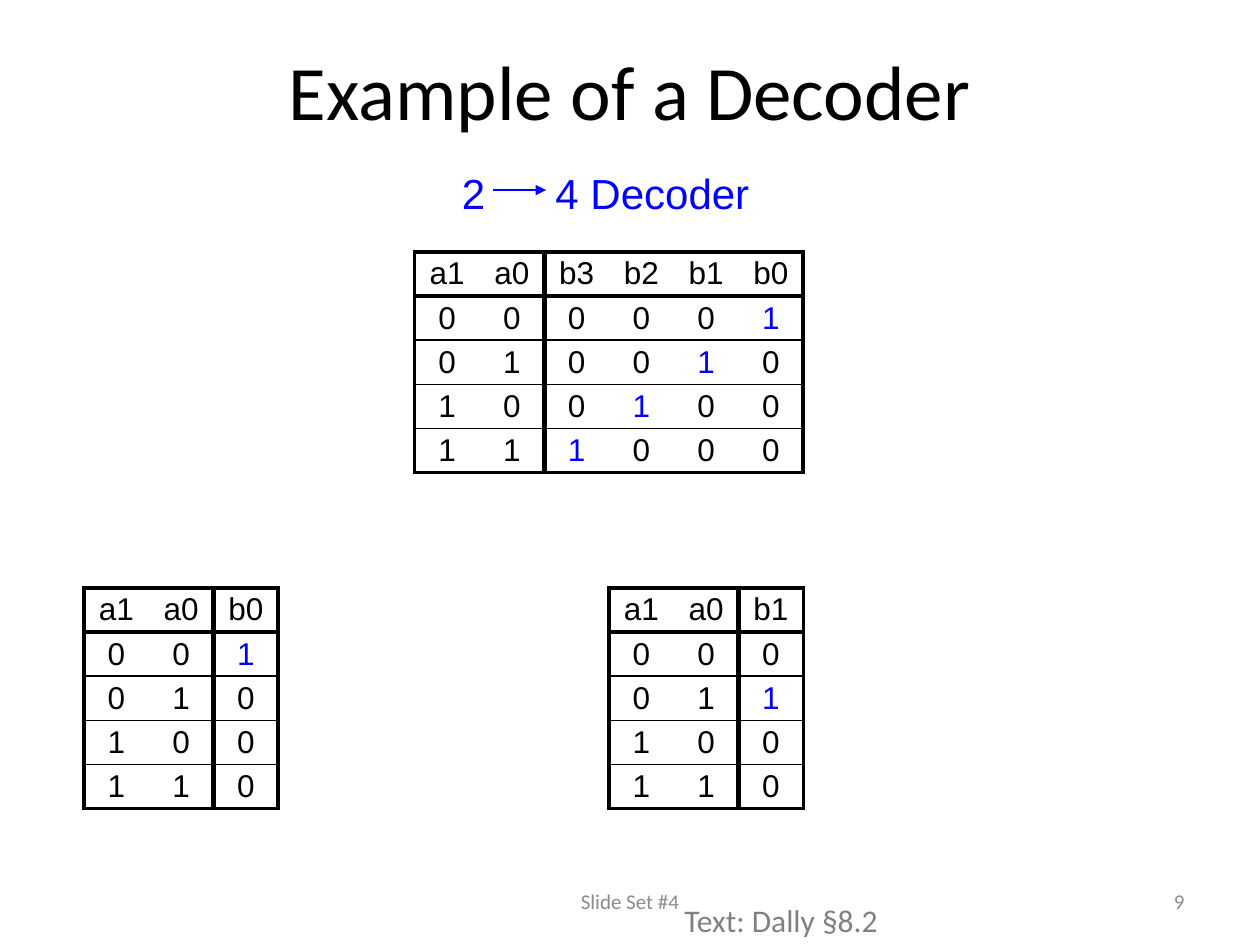
from dataclasses import dataclass
from itertools import product

from lxml.etree import SubElement
from pptx import Presentation
from pptx.dml.color import RGBColor
from pptx.enum.shapes import MSO_CONNECTOR
from pptx.enum.text import MSO_ANCHOR, PP_ALIGN
from pptx.oxml.ns import qn
from pptx.util import Pt


@dataclass(frozen=True)
class Theme:
    black: str = "000000"
    blue: str = "0000FF"
    gray: str = "808080"
    footer_gray: str = "8C8C8C"
    heading_font: str = "Calibri"
    body_font: str = "Arial"
    title_size: float = 44
    subtitle_size: float = 24
    body_size: float = 18
    footer_size: float = 12
    space_before: float = 3.6
    arrow_line: float = 0.75
    thin_line: float = 1
    frame_line: float = 2.25
    divider_line: float = 3
    column_width: float = 37
    row_height: float = 25.2


class SlideBuilder:
    def __init__(self, slide, theme):
        self.slide = slide
        self.theme = theme

    def add_run(self, paragraph, text, size, color, font):
        run = paragraph.add_run()
        run.text = text
        run.font.size = Pt(size)
        run.font.name = font
        run.font.color.rgb = RGBColor.from_string(color)

    def add_text(self, text, box, size, color, font=None, align=PP_ALIGN.LEFT,
                 anchor=MSO_ANCHOR.MIDDLE):
        shape = self.slide.shapes.add_textbox(*map(Pt, box))
        frame = shape.text_frame
        frame.word_wrap = True
        frame.vertical_anchor = anchor
        paragraph = frame.paragraphs[0]
        paragraph.alignment = align
        self.add_run(paragraph, text, size, color, font or self.theme.heading_font)
        return frame

    def add_subtitle(self, text, box, tab_position):
        theme = self.theme
        frame = self.add_text(text, box, theme.subtitle_size, theme.blue,
                              theme.body_font, anchor=MSO_ANCHOR.TOP)
        frame.margin_left = frame.margin_right = Pt(0)
        frame.margin_top = frame.margin_bottom = Pt(0)
        paragraph = frame.paragraphs[0]
        paragraph.space_before = Pt(theme.space_before)
        tabs = SubElement(paragraph._p.get_or_add_pPr(), qn("a:tabLst"))
        SubElement(tabs, qn("a:tab"), pos=str(Pt(tab_position)), algn="l")

    def add_arrow(self, start, end):
        arrow = self.slide.shapes.add_connector(
            MSO_CONNECTOR.STRAIGHT, *map(Pt, (*start, *end)))
        arrow.line.color.rgb = RGBColor.from_string(self.theme.blue)
        arrow.line.width = Pt(self.theme.arrow_line)
        SubElement(arrow.line._get_or_add_ln(), qn("a:tailEnd"), type="triangle")
        SubElement(arrow._element.spPr, qn("a:effectLst"))

    def add_border(self, cell, side, width):
        properties = cell._tc.get_or_add_tcPr()
        line = SubElement(properties, qn(f"a:ln{side}"), w=str(Pt(width)))
        if width:
            fill = SubElement(line, qn("a:solidFill"))
            SubElement(fill, qn("a:srgbClr"), val=self.theme.black)
        else:
            SubElement(line, qn("a:noFill"))

    def add_cell(self, cell, text, color, borders):
        theme = self.theme
        cell.margin_left = cell.margin_right = Pt(0)
        cell.margin_top = cell.margin_bottom = Pt(0)
        cell.vertical_anchor = MSO_ANCHOR.MIDDLE
        for side, width in zip("LRTB", borders):
            self.add_border(cell, side, width)
        cell.fill.background()
        paragraph = cell.text_frame.paragraphs[0]
        paragraph.alignment = PP_ALIGN.CENTER
        paragraph.space_before = Pt(theme.space_before)
        self.add_run(paragraph, text, theme.body_size, color, theme.body_font)

    def add_truth_table(self, left, top, outputs):
        theme = self.theme
        inputs = list(product((0, 1), repeat=2))
        rows = [["a1", "a0", *(f"b{output}" for output in outputs)]]
        for number, bits in enumerate(inputs):
            rows.append([*bits, *(int(output == number) for output in outputs)])
        column_count = len(rows[0])
        table = self.slide.shapes.add_table(
            len(rows), column_count, Pt(left), Pt(top),
            Pt(theme.column_width * column_count),
            Pt(theme.row_height * len(rows))).table
        table.first_row = table.horz_banding = False
        for column in table.columns:
            column.width = Pt(theme.column_width)
        vertical = [theme.frame_line, 0, theme.divider_line,
                    *[0] * (len(outputs) - 1), theme.frame_line]
        horizontal = [theme.frame_line, theme.divider_line,
                      *[theme.thin_line] * (len(inputs) - 1), theme.frame_line]
        for row_index, row in enumerate(rows):
            table.rows[row_index].height = Pt(theme.row_height)
            for column_index, value in enumerate(row):
                is_active = column_index >= 2 and value == 1
                borders = (*vertical[column_index:column_index + 2],
                           *horizontal[row_index:row_index + 2])
                self.add_cell(table.cell(row_index, column_index), str(value),
                              theme.blue if is_active else theme.black, borders)


def main():
    presentation = Presentation()
    presentation.slide_width = Pt(720)
    presentation.slide_height = Pt(540)
    slide = presentation.slides.add_slide(presentation.slide_layouts[6])
    theme = Theme()
    builder = SlideBuilder(slide, theme)

    builder.add_text("Example of a Decoder", (36, 6, 648, 90), theme.title_size,
                     theme.black, align=PP_ALIGN.CENTER)
    builder.add_arrow((282, 108.6), (312, 108.6))
    builder.add_subtitle("2\t4 Decoder", (264, 96, 168, 28.8), 53.4)
    builder.add_truth_table(237, 144, (3, 2, 1, 0))
    builder.add_text("Text: Dally §8.2", (384, 511.2, 150, 28.8), theme.body_size,
                     theme.gray, anchor=MSO_ANCHOR.TOP)
    builder.add_text("9", (516, 500.5, 168, 28.8), theme.footer_size,
                     theme.footer_gray, align=PP_ALIGN.RIGHT)
    builder.add_text("Slide Set #4", (246, 500.5, 228, 28.8), theme.footer_size,
                     theme.footer_gray, align=PP_ALIGN.CENTER)
    for left, output in ((48, 0), (348, 1)):
        builder.add_truth_table(left, 336, (output,))

    presentation.save("out.pptx")


if __name__ == "__main__":
    main()
